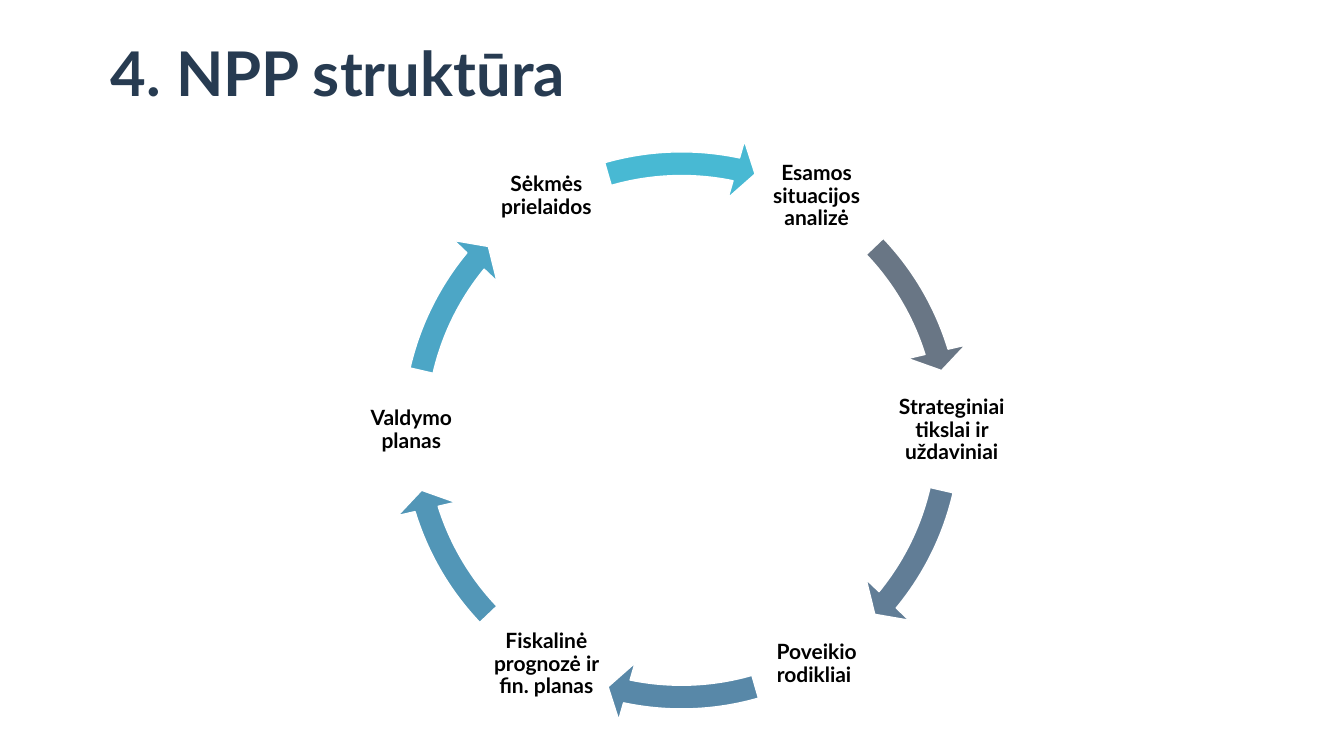
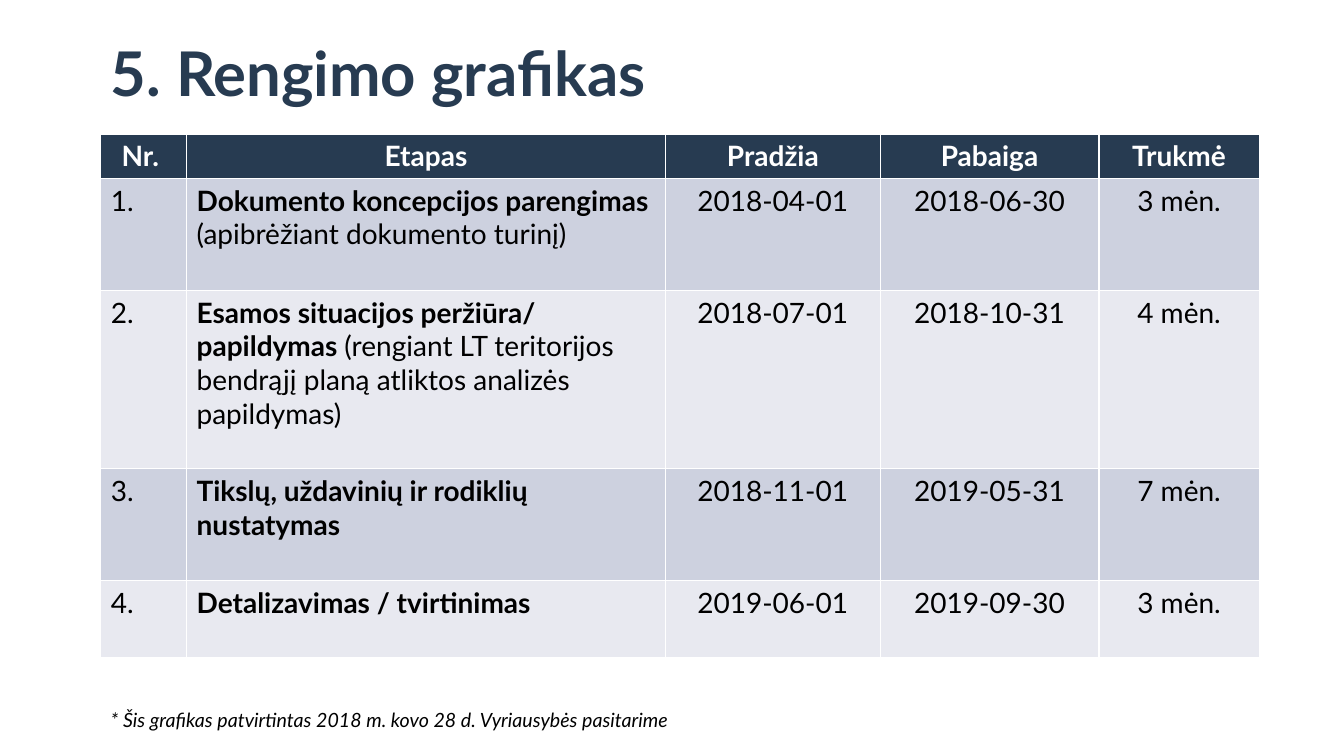
"""Build the two slides on plan structure and schedule."""
from math import cos, radians, sin

from pptx import Presentation
from pptx.dml.color import RGBColor
from pptx.enum.shapes import MSO_SHAPE
from pptx.enum.text import MSO_ANCHOR, PP_ALIGN
from pptx.util import Inches, Pt

HUES = {
    "navy": "273B51", "black": "000000", "white": "FFFFFF",
    "odd": "CDD1DF", "even": "E8E9F0",
}
FONTS = {
    "title": {"size": Pt(44), "bold": True},
    "label": {"size": Pt(15), "bold": True},
    "cell": {"size": Pt(20), "bold": False},
    "strong": {"size": Pt(20), "bold": True},
    "note": {"size": Pt(14), "italic": True},
}
STEPS = [
    ("Esamos situacijos analizė", "697685"),
    ("Strateginiai tikslai ir uždaviniai", "617D96"),
    ("Poveikio rodikliai ", "5888A8"),
    ("Fiskalinė prognozė ir fin. planas", "5296B7"),
    ("Valdymo planas", "4CA6C6"),
    ("Sėkmės prielaidos", "48B9D3"),
]
ARCS = [(189.84, 205.72), (223.77, 239.66), (260.39, 277.1)]
TURN = 216
HEADS = ["Nr. ", "Etapas", "Pradžia", "Pabaiga", "Trukmė"]
ROWS = [
    ("1.", ("Dokumento koncepcijos parengimas ", "(apibrėžiant dokumento turinį)"),
     "2018-04-01", "2018-06-30", "3 mėn."),
    ("2.", ("Esamos situacijos peržiūra/ papildymas ",
            "(rengiant LT teritorijos bendrąjį planą atliktos analizės papildymas)"),
     "2018-07-01", "2018-10-31", "4 mėn."),
    ("3.", ("Tikslų, uždavinių ir rodiklių nustatymas",),
     "2018-11-01", "2019-05-31", "7 mėn."),
    ("4.", ("Detalizavimas / tvirtinimas",),
     "2019-06-01", "2019-09-30", "3 mėn."),
]
WIDTHS = [0.85, 4.75, 2.13, 2.17, 1.59]
HEIGHTS = [0.44, 1.11, 1.77, 1.11, 0.76]


class Deck:
    def __init__(self):
        self.prs = Presentation()
        self.prs.slide_width = Inches(13.33)
        self.prs.slide_height = Inches(7.5)
        self.slide = None

    def page(self, title):
        self.slide = self.prs.slides.add_slide(self.prs.slide_layouts[6])
        self.text(title, (1, 0.31, 11.33, 0.89), "title", "navy", space=0.9)

    def run(self, para, text, style, hue="black"):
        run = para.add_run()
        run.text = text
        for key, value in {"name": "Lato", **FONTS[style]}.items():
            setattr(run.font, key, value)
        run.font.color.rgb = RGBColor.from_string(HUES[hue])

    def text(self, text, box, style, hue="black", align=PP_ALIGN.LEFT,
             anchor=MSO_ANCHOR.MIDDLE, space=1.0, inset=None):
        frame = self.slide.shapes.add_textbox(*map(Inches, box)).text_frame
        frame.word_wrap = True
        frame.vertical_anchor = anchor
        if inset is not None:
            for side in ("left", "top", "right", "bottom"):
                setattr(frame, "margin_" + side, Inches(inset))
        para = frame.paragraphs[0]
        para.alignment, para.line_spacing = align, space
        self.run(para, text, style, hue)

    def arrow(self, box, tail, head, fill):
        shape = self.slide.shapes.add_shape(MSO_SHAPE.CIRCULAR_ARROW, *map(Inches, box))
        shape.shadow.inherit = False
        for i, value in enumerate((0.04, 2.5, head, tail, 0.05)):
            shape.adjustments[i] = value
        shape.fill.solid()
        shape.fill.fore_color.rgb = RGBColor.from_string(fill)
        shape.line.color.rgb = RGBColor.from_string(HUES["white"])
        shape.line.width = Pt(1)

    def cycle(self, steps, mid, top, ring, reach, size):
        for i, (label, fill) in enumerate(steps):
            angle = radians(60 * i - 60)
            left = mid + reach * cos(angle) - size / 2
            high = top + reach * sin(angle) - size / 2
            self.text(label, (left, high, size, size), "label",
                      align=PP_ALIGN.CENTER, space=0.9, inset=0.02)
            tail, head = ((a + i // 3 * TURN / 2) % TURN for a in ARCS[i % 3])
            self.arrow((mid - ring / 2, top - ring / 2, ring, ring), tail, head, fill)

    def cell(self, cell, parts, styles, hue, fill, align):
        cell.fill.solid()
        cell.fill.fore_color.rgb = RGBColor.from_string(HUES[fill])
        para = cell.text_frame.paragraphs[0]
        para.alignment = align
        for part, style in zip(parts, styles):
            self.run(para, part, style, hue)

    def table(self, heads, rows, left, top):
        box = map(Inches, (left, top, sum(WIDTHS), sum(HEIGHTS)))
        table = self.slide.shapes.add_table(len(rows) + 1, len(heads), *box).table
        for col, width in zip(table.columns, WIDTHS):
            col.width = Inches(width)
        for row, height in zip(table.rows, HEIGHTS):
            row.height = Inches(height)
        for c, head in enumerate(heads):
            self.cell(table.cell(0, c), [head], ["strong"], "white", "navy", PP_ALIGN.CENTER)
        for r, row in enumerate(rows, 1):
            fill = "odd" if r % 2 else "even"
            for c, item in enumerate(row):
                parts, styles = (item, ["strong", "cell"]) if c == 1 else ([item], ["cell"])
                align = PP_ALIGN.LEFT if c < 2 else PP_ALIGN.CENTER
                self.cell(table.cell(r, c), parts, styles, "black", fill, align)


def main():
    deck = Deck()
    deck.page("4. NPP struktūra")
    deck.cycle(STEPS, mid=6.76, top=4.27, ring=5.88, reach=2.68, size=1.2)
    deck.page("5. Rengimo grafikas")
    deck.table(HEADS, ROWS, left=1, top=1.33)
    deck.text("* Šis grafikas patvirtintas 2018 m. kovo 28 d. Vyriausybės pasitarime",
              (1, 6.97, 6.33, 0.34), "note", anchor=MSO_ANCHOR.TOP)
    deck.prs.save("out.pptx")


if __name__ == "__main__":
    main()
